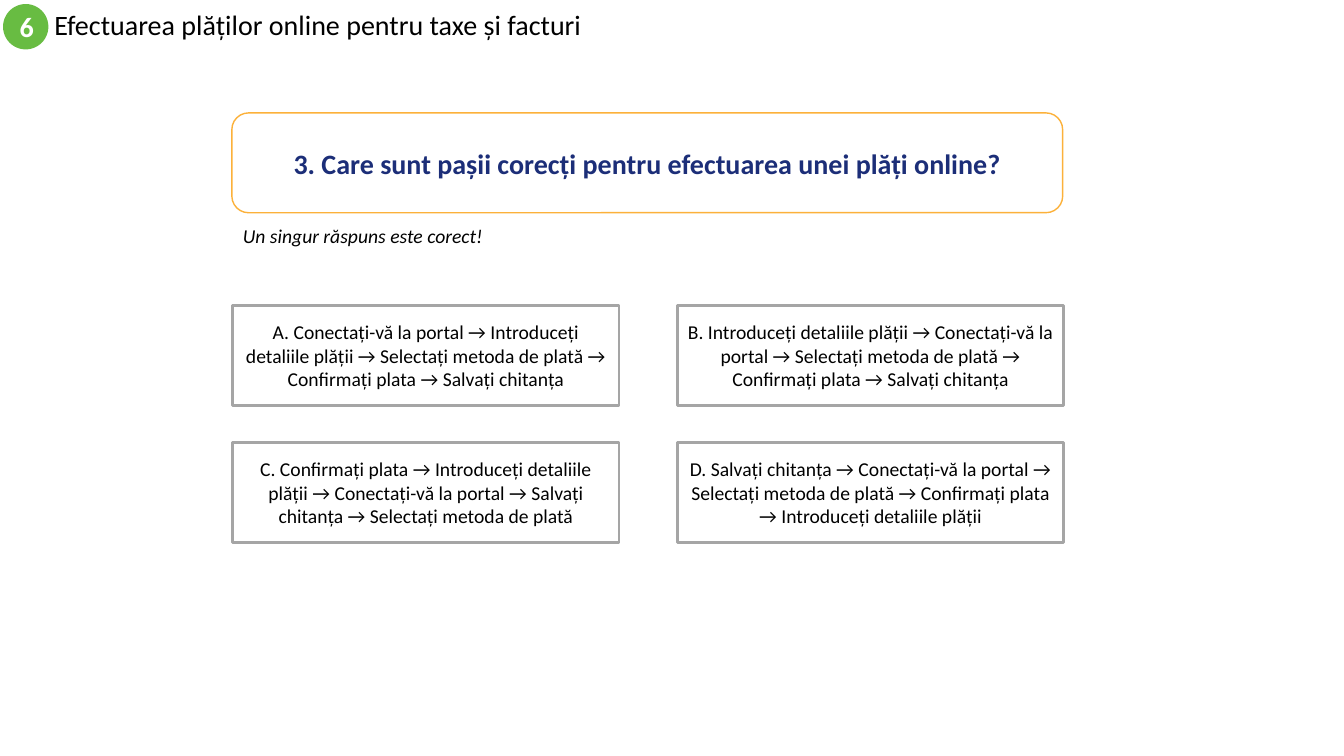
import pptx
import pptx.util
import pptx.dml.color
import pptx.enum.shapes
import pptx.enum.text

Inches = pptx.util.Inches
SHAPES = pptx.enum.shapes.MSO_SHAPE
ALIGN = pptx.enum.text.PP_ALIGN
ANCHOR = pptx.enum.text.MSO_ANCHOR

COLORS = {
    "white": "FFFFFF",
    "black": "000000",
    "green": "68BC42",
    "amber": "FCB13A",
    "navy": "1C2E78",
    "gray": "A5A5A5",
}

ANSWERS = [
    "A. Conectați-vă la portal → Introduceți detaliile plății → Selectați metoda de plată → "
    "Confirmați plata → Salvați chitanța",
    "B. Introduceți detaliile plății → Conectați-vă la portal → Selectați metoda de plată → "
    "Confirmați plata → Salvați chitanța",
    "C. Confirmați plata → Introduceți detaliile plății → Conectați-vă la portal → "
    "Salvați chitanța → Selectați metoda de plată",
    "D. Salvați chitanța → Conectați-vă la portal → Selectați metoda de plată → "
    "Confirmați plata → Introduceți detaliile plății",
]


def color(name):
    return pptx.dml.color.RGBColor.from_string(COLORS[name])


def write_text(shape, text, size=14, ink="black", bold=False, italic=False,
               align=ALIGN.CENTER, anchor=ANCHOR.MIDDLE, line_spacing=None, font="Calibri"):
    frame = shape.text_frame
    frame.word_wrap = True
    frame.vertical_anchor = anchor
    paragraph = frame.paragraphs[0]
    paragraph.alignment = align
    paragraph.line_spacing = line_spacing
    run = paragraph.add_run()
    run.text = text
    run.font.name = font
    run.font.size = pptx.util.Pt(size)
    run.font.bold = bold
    run.font.italic = italic
    run.font.color.rgb = color(ink)


class QuizSlide:
    def __init__(self, presentation):
        self.slide = presentation.slides.add_slide(presentation.slide_layouts[6])

    def text(self, box, text, **style):
        shape = self.slide.shapes.add_textbox(*map(Inches, box))
        write_text(shape, text, align=ALIGN.LEFT, **style)
        return shape

    def shape(self, kind, box, text, fill="white", line=None, line_width=1, **style):
        shape = self.slide.shapes.add_shape(kind, *map(Inches, box))
        shape.shadow.inherit = False
        shape.fill.solid()
        shape.fill.fore_color.rgb = color(fill)
        if line:
            shape.line.color.rgb = color(line)
            shape.line.width = pptx.util.Pt(line_width)
        else:
            shape.line.fill.background()
        write_text(shape, text, **style)
        return shape


def main():
    presentation = pptx.Presentation()
    presentation.slide_width = Inches(13.33)
    presentation.slide_height = Inches(7.5)
    quiz = QuizSlide(presentation)

    # Header
    quiz.text((0.44, 0.04, 8, 0.45), "Efectuarea plăților online pentru taxe și facturi",
              size=20, line_spacing=0.9)
    quiz.shape(SHAPES.OVAL, (0.03, 0.04, 0.45, 0.45), "6", fill="green",
               size=20, ink="white", bold=True)

    # Question
    quiz.shape(SHAPES.ROUNDED_RECTANGLE, (2.3, 1.12, 8.24, 0.99),
               "3. Care sunt pașii corecți pentru efectuarea unei plăți online?",
               line="amber", size=20, ink="navy", bold=True)
    hint = quiz.text((2.31, 2.17, 2.59, 0.34), "Un singur răspuns este corect!",
                     italic=True, anchor=ANCHOR.TOP)
    hint.text_frame.auto_size = pptx.enum.text.MSO_AUTO_SIZE.SHAPE_TO_FIT_TEXT

    # Answers, two per row
    for index, answer in enumerate(ANSWERS):
        row, column = divmod(index, 2)
        quiz.shape(SHAPES.RECTANGLE, (2.31 + 4.41 * column, 3.03 + 1.36 * row, 3.83, 0.99),
                   answer, line="gray", line_width=2)

    presentation.save("out.pptx")


if __name__ == "__main__":
    main()
